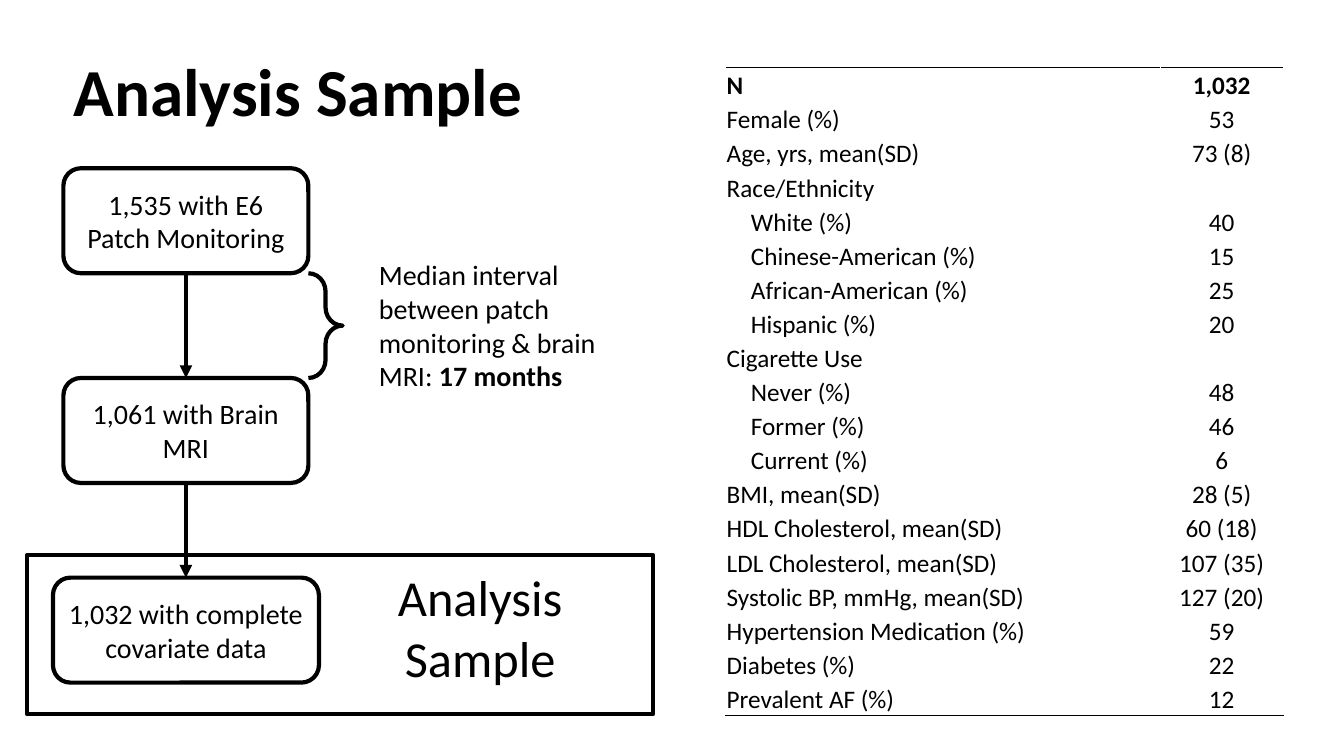
from lxml.etree import SubElement
from pptx import Presentation
from pptx.dml.color import RGBColor
from pptx.enum.shapes import MSO_CONNECTOR as Connector, MSO_SHAPE as Shape
from pptx.enum.text import MSO_ANCHOR as Anchor, PP_ALIGN as Align
from pptx.oxml.ns import qn
from pptx.util import Pt

BLACK = RGBColor(0, 0, 0)
WHITE = RGBColor(255, 255, 255)
FONT = "Calibri"

presentation = Presentation()
presentation.slide_width, presentation.slide_height = Pt(960), Pt(540)
slide = presentation.slides.add_slide(presentation.slide_layouts[6])


def write(frame, text, size=20, bold=False, align=Align.LEFT, anchor=Anchor.TOP, bold_end="", spacing=None):
    frame.word_wrap = True
    frame.vertical_anchor = anchor
    paragraph = frame.paragraphs[0]
    paragraph.alignment = align
    paragraph.line_spacing = spacing
    paragraph.font.size = Pt(size)
    for part, is_bold in ((text, bold), (bold_end, True)):
        if part:
            run = paragraph.add_run()
            run.text = part
            run.font.name, run.font.size, run.font.bold = FONT, Pt(size), is_bold
            run.font.color.rgb = BLACK


def add_outline(kind, left, top, width, height):
    shape = slide.shapes.add_shape(kind, Pt(left), Pt(top), Pt(width), Pt(height))
    shape.shadow.inherit = False
    shape.fill.background()
    shape.line.color.rgb = BLACK
    shape.line.width = Pt(3)
    return shape


# Title
title = slide.shapes.add_textbox(Pt(45.4), Pt(15.8), Pt(828), Pt(104.4))
write(title.text_frame, "Analysis Sample", size=48, bold=True, anchor=Anchor.MIDDLE, spacing=0.9)

# Flow chart boxes, centred on one axis
AXIS, BOX_HEIGHT = 132.8, 75
steps = [
    ("1,535 with E6 Patch Monitoring", 120.2, 175),
    ("1,061 with Brain MRI", 270, 175),
    ("1,032 with complete covariate data", 412.6, 190),
]
for text, top, width in steps:
    box = add_outline(Shape.ROUNDED_RECTANGLE, AXIS - width / 2, top, width, BOX_HEIGHT)
    write(box.text_frame, text, align=Align.CENTER, anchor=Anchor.MIDDLE)

# Arrows between successive boxes
for (_, top, _), (_, next_top, _) in zip(steps, steps[1:]):
    arrow = slide.shapes.add_connector(
        Connector.STRAIGHT, Pt(AXIS), Pt(top + BOX_HEIGHT), Pt(AXIS), Pt(next_top))
    arrow.line.color.rgb = BLACK
    arrow.line.width = Pt(3)
    SubElement(arrow.line._get_or_add_ln(), qn("a:tailEnd"), type="triangle")
    SubElement(arrow._element.spPr, qn("a:effectLst"))

# Frame around the final sample
add_outline(Shape.RECTANGLE, 19.4, 396.4, 447.1, 113.8)
sample_label = slide.shapes.add_textbox(Pt(263.5), Pt(401), Pt(159), Pt(94.5))
write(sample_label.text_frame, "Analysis Sample", size=36, align=Align.CENTER)

# Brace and interval note
brace = add_outline(Shape.RIGHT_BRACE, 220.3, 195.2, 24.5, 74.8)
brace.adjustments[0], brace.adjustments[1] = 0.53, 0.5
interval_note = slide.shapes.add_textbox(Pt(263.5), Pt(180.7), Pt(207.4), Pt(104.4))
write(interval_note.text_frame, "Median interval between patch monitoring & brain MRI: ", bold_end="17 months")

# Characteristics table: label, value, indented
rows = [
    ("N", "1,032", False),
    ("Female (%)", "53", False),
    ("Age, yrs, mean(SD)", "73 (8)", False),
    ("Race/Ethnicity", "", False),
    ("White (%)", "40", True),
    ("Chinese-American (%)", "15", True),
    ("African-American (%)", "25", True),
    ("Hispanic (%)", "20", True),
    ("Cigarette Use", "", False),
    ("Never (%)", "48", True),
    ("Former (%)", "46", True),
    ("Current (%)", "6", True),
    ("BMI, mean(SD)", "28 (5)", False),
    ("HDL Cholesterol, mean(SD)", "60 (18)", False),
    ("LDL Cholesterol, mean(SD)", "107 (35)", False),
    ("Systolic BP, mmHg, mean(SD)", "127 (20)", False),
    ("Hypertension Medication (%)", "59", False),
    ("Diabetes (%)", "22", False),
    ("Prevalent AF (%)", "12", False),
]
ROW_HEIGHT = 24.37
last = len(rows) - 1
table = slide.shapes.add_table(
    len(rows), 2, Pt(518.4), Pt(48.2), Pt(398.2), Pt(ROW_HEIGHT * len(rows))).table
table.first_row = table.horz_banding = False
table.columns[0].width, table.columns[1].width = Pt(310.3), Pt(87.9)

for row_index, (label, value, indented) in enumerate(rows):
    table.rows[row_index].height = Pt(ROW_HEIGHT)
    for column, text in enumerate((label, value)):
        cell = table.cell(row_index, column)
        cell.margin_left = Pt(18 if indented and column == 0 else 0.7)
        cell.margin_top = cell.margin_right = Pt(0.7)
        cell.margin_bottom = 0
        write(cell.text_frame, text, size=18, bold=row_index == 0,
              align=Align.CENTER if column else Align.LEFT)
        cell.vertical_anchor = Anchor.BOTTOM

        # Black rules only above the first row and below the last
        ruled = {0: "lnT", last: "lnB"}.get(row_index)
        properties = cell._tc.get_or_add_tcPr()
        for side in ("lnL", "lnR", "lnT", "lnB"):
            border = SubElement(properties, qn(f"a:{side}"), w=str(Pt(1)))
            border_fill = SubElement(border, qn("a:solidFill"))
            SubElement(border_fill, qn("a:srgbClr"), val=str(BLACK if side == ruled else WHITE))
        cell.fill.background()

presentation.save("out.pptx")
